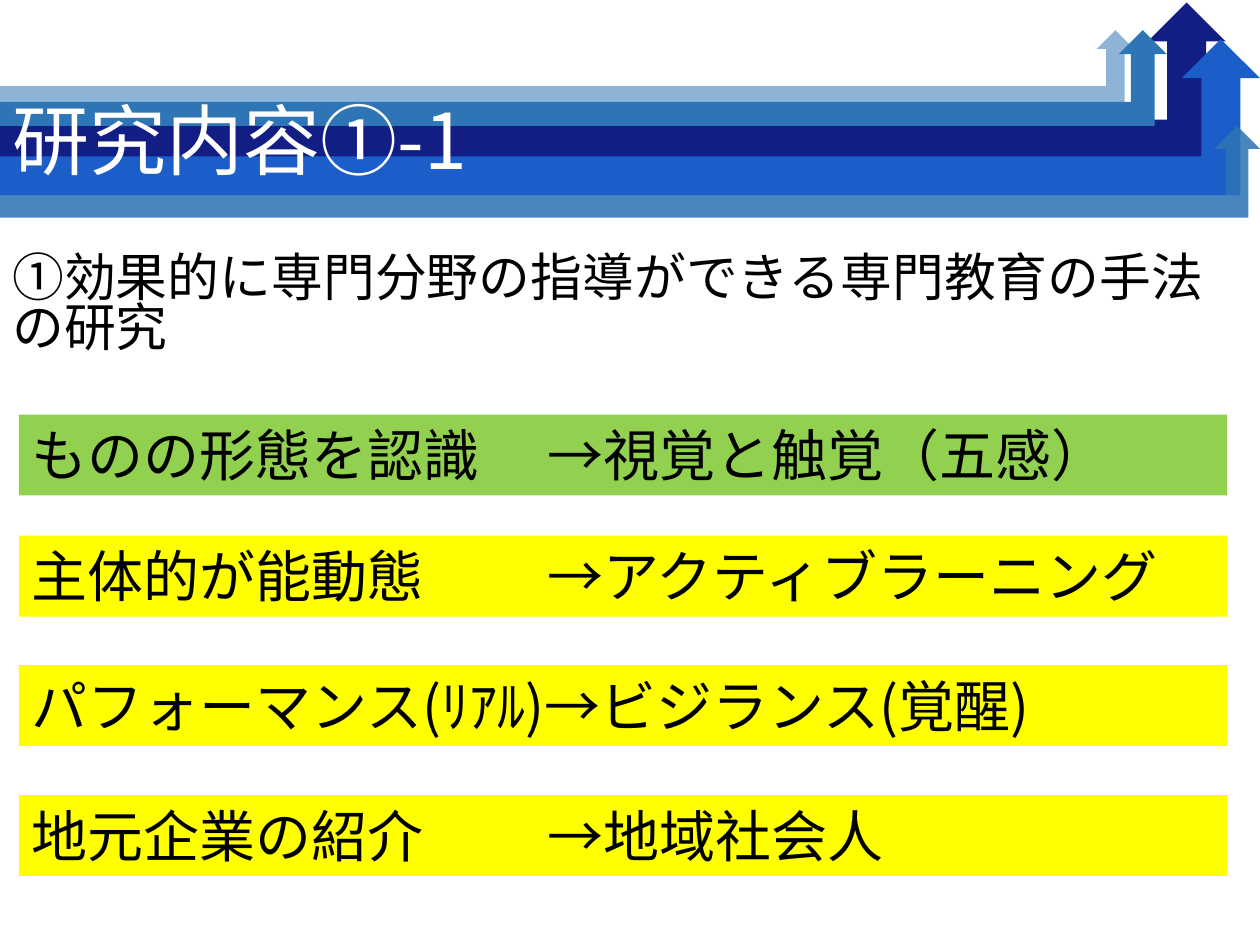
import pptx
import pptx.util
import pptx.dml.color
import pptx.enum.shapes
import pptx.enum.text
import pptx.oxml.ns
from lxml import etree

Cm, Pt = pptx.util.Cm, pptx.util.Pt
RGBColor = pptx.dml.color.RGBColor
MSO_SHAPE = pptx.enum.shapes.MSO_SHAPE
MSO_ANCHOR = pptx.enum.text.MSO_ANCHOR
PP_ALIGN = pptx.enum.text.PP_ALIGN
qn = pptx.oxml.ns.qn

FONT = "Noto Sans CJK JP"
WHITE = RGBColor(0xFF, 0xFF, 0xFF)
BLACK = RGBColor(0x00, 0x00, 0x00)
NAVY = RGBColor(0x13, 0x1E, 0x85)
BLUE = RGBColor(0x1B, 0x5D, 0xC9)
STEEL = RGBColor(0x2E, 0x75, 0xB6)
GREEN = RGBColor(0x92, 0xD0, 0x50)
YELLOW = RGBColor(0xFF, 0xFF, 0x00)

# Content
TITLE = "研究内容①-1"
SUBTITLE = "①効果的に専門分野の指導ができる専門教育の手法の研究"
BARS = [  # top (cm), fill, text
    (8.36, GREEN, "ものの形態を認識\t→視覚と触覚（五感）"),
    (10.8, YELLOW, "主体的が能動態\t→アクティブラーニング"),
    (13.41, YELLOW, "パフォーマンス(ﾘｱﾙ)→ビジランス(覚醒)"),
    (16.03, YELLOW, "地元企業の紹介\t→地域社会人"),
]
ARROWS = [  # top, width, height (cm), fill, opacity %
    (0.05, 24.71, 3.15, NAVY, 100),
    (0.79, 25.4, 3.15, BLUE, 100),
    (0.61, 23.52, 1.93, STEEL, 100),
    (0.61, 22.86, 1.5, STEEL, 54),
    (2.54, 25.4, 1.85, STEEL, 87),
]
BAR_LEFT, BAR_WIDTH, BAR_HEIGHT = 0.38, 24.36, 1.63
ARROW_TAB = 10.41


def add_block(slide, kind, box, fill, opacity=100):
    sp = slide.shapes.add_shape(kind, *(Cm(v) for v in box))
    sp.shadow.inherit = False
    sp.line.fill.background()
    sp.fill.solid()
    sp.fill.fore_color.rgb = fill
    if opacity < 100:
        color = sp.fill._xPr.find(qn("a:solidFill"))[0]
        etree.SubElement(color, qn("a:alpha"), val=str(opacity * 1000))
    return sp


def write(sp, text, size, color, anchor, spacing=1.0):
    tf = sp.text_frame
    tf.word_wrap = True
    tf.vertical_anchor = anchor
    p = tf.paragraphs[0]
    p.alignment = PP_ALIGN.LEFT
    p.line_spacing = spacing
    r = p.add_run()
    r.text = text
    r.font.size = Pt(size)
    r.font.name = FONT
    r.font.color.rgb = color
    etree.SubElement(r._r.get_or_add_rPr(), qn("a:ea"), typeface=FONT)
    return p


def add_tab(p, position):
    tabs = etree.SubElement(p._p.get_or_add_pPr(), qn("a:tabLst"))
    etree.SubElement(tabs, qn("a:tab"), pos=str(Cm(position)), algn="l")


def main():
    prs = pptx.Presentation()
    prs.slide_width, prs.slide_height = Cm(25.4), Cm(19.05)
    slide = prs.slides.add_slide(prs.slide_layouts[6])

    # Header of bent arrows
    for top, width, height, fill, opacity in ARROWS:
        add_block(slide, MSO_SHAPE.BENT_UP_ARROW, (0, top, width, height), fill, opacity)

    # Title and subtitle
    title = slide.shapes.add_textbox(Cm(0), Cm(1.14), Cm(29.49), Cm(3.53))
    write(title, TITLE, 44, WHITE, MSO_ANCHOR.MIDDLE, 0.9)
    subtitle = slide.shapes.add_textbox(Cm(0), Cm(5.05), Cm(25.4), Cm(2.46))
    p = write(subtitle, SUBTITLE, 29.6, BLACK, MSO_ANCHOR.TOP, 0.8)
    p.space_before = Pt(10)

    # Topic bars, with the arrows aligned on a tab stop
    for top, fill, text in BARS:
        bar = add_block(slide, MSO_SHAPE.RECTANGLE, (BAR_LEFT, top, BAR_WIDTH, BAR_HEIGHT), fill)
        p = write(bar, text, 32, BLACK, MSO_ANCHOR.TOP)
        if "\t" in text:
            add_tab(p, ARROW_TAB)

    prs.save("out.pptx")


if __name__ == "__main__":
    main()
